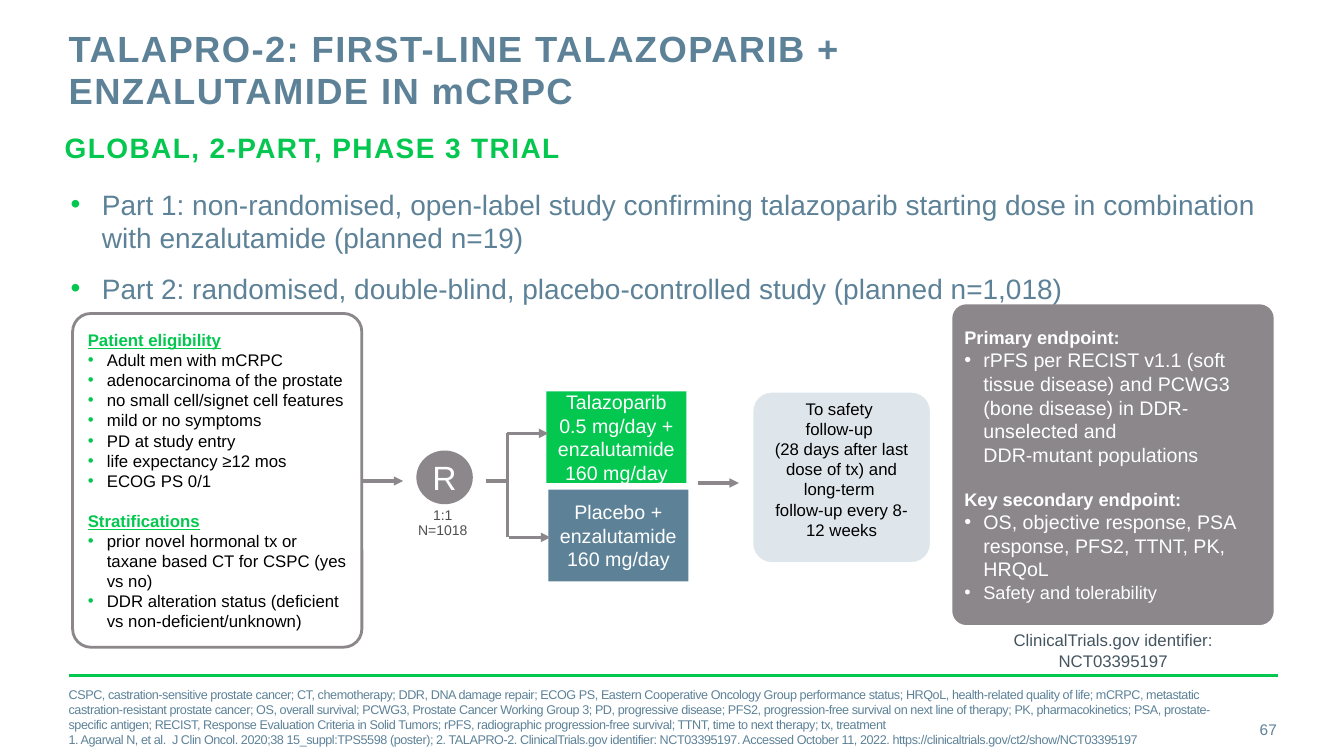
from lxml import etree
from pptx import Presentation
from pptx.dml.color import RGBColor
from pptx.enum.shapes import MSO_CONNECTOR, MSO_SHAPE
from pptx.enum.text import MSO_ANCHOR, MSO_AUTO_SIZE, PP_ALIGN
from pptx.oxml.ns import qn
from pptx.util import Cm, Pt

RECT, ROUNDED, OVAL = MSO_SHAPE.RECTANGLE, MSO_SHAPE.ROUNDED_RECTANGLE, MSO_SHAPE.OVAL
STRAIGHT = MSO_CONNECTOR.STRAIGHT
TOP, MIDDLE = MSO_ANCHOR.TOP, MSO_ANCHOR.MIDDLE
LEFT, CENTER, RIGHT = PP_ALIGN.LEFT, PP_ALIGN.CENTER, PP_ALIGN.RIGHT
NO_AUTOFIT = MSO_AUTO_SIZE.NONE

COLORS = {
    "green": "03C74F", "blue": "5D8298", "grey": "8B878B", "pale": "DEE6EB",
    "white": "FFFFFF", "black": "000000", "slate": "455560", "dark": "505050",
}
COMPARISON_LAYOUT = 4
NO_INSETS = (0, 0, 0, 0)
BOX_INSETS = (0.25, 0.13, 0.25, 0.13)


def rgb(name):
    return RGBColor.from_string(COLORS[name])


class TrialSlide:
    def __init__(self, presentation, font="Arial"):
        self.font = font
        self.slide = presentation.slides.add_slide(presentation.slide_layouts[COMPARISON_LAYOUT])

    def indent(self, paragraph, bullet, hanging):
        """Set the bullet colour and hanging indent, or clear both when bullet is None."""
        properties = paragraph._p.get_or_add_pPr()
        properties.set("marL", str(Cm(hanging) if bullet else 0))
        properties.set("indent", str(-Cm(hanging) if bullet else 0))
        if bullet:
            color = etree.SubElement(properties, qn("a:buClr"))
            etree.SubElement(color, qn("a:srgbClr"), val=COLORS[bullet])
            etree.SubElement(properties, qn("a:buFont"), typeface=self.font)
            etree.SubElement(properties, qn("a:buChar"), char="•")
        else:
            etree.SubElement(properties, qn("a:buNone"))

    def fill_frame(self, frame, paragraphs, align=LEFT, anchor=MIDDLE, insets=BOX_INSETS,
                   line_spacing=1.0, hanging=0.48, wrap=True, **style):
        """Fill a frame; each paragraph is a dict with text and changes to the shared style."""
        frame.auto_size = NO_AUTOFIT
        frame.word_wrap = wrap
        frame.vertical_anchor = anchor
        (frame.margin_left, frame.margin_top,
         frame.margin_right, frame.margin_bottom) = map(Cm, insets)
        for index, changes in enumerate(paragraphs):
            look = {**style, **changes}
            paragraph = frame.paragraphs[0] if index == 0 else frame.add_paragraph()
            self.indent(paragraph, look.get("bullet"), hanging)
            paragraph.alignment = align
            paragraph.line_spacing = line_spacing
            paragraph.space_before = Pt(look.get("before", 0))
            paragraph.space_after = Pt(0)
            for number, line in enumerate(look["text"].split("\n")):
                if number:
                    paragraph.add_line_break()
                run = paragraph.add_run()
                run.text = line
                run.font.name = self.font
                run.font.size = Pt(look["size"])
                run.font.color.rgb = rgb(look["color"])
                run.font.bold = look.get("bold", False)
                run.font.underline = look.get("underline", False)
                if "tracking" in look:
                    run._r.get_or_add_rPr().set("spc", str(look["tracking"]))

    def placeholder(self, idx, box, paragraphs, **style):
        holder = self.slide.placeholders[idx]
        holder.left, holder.top, holder.width, holder.height = map(Cm, box)
        self.fill_frame(holder.text_frame, paragraphs, insets=NO_INSETS, **style)

    def remove_placeholder(self, idx):
        element = self.slide.placeholders[idx]._element
        element.getparent().remove(element)

    def text(self, box, paragraphs, **style):
        frame = self.slide.shapes.add_textbox(*map(Cm, box)).text_frame
        self.fill_frame(frame, paragraphs, **style)

    def shape(self, kind, box, paragraphs, fill=None, line=None, weight=2, corner=None, **style):
        shape = self.slide.shapes.add_shape(kind, *map(Cm, box))
        shape.shadow.inherit = False
        if corner is not None:
            shape.adjustments[0] = corner
        if fill:
            shape.fill.solid()
            shape.fill.fore_color.rgb = rgb(fill)
        else:
            shape.fill.background()
        if line:
            shape.line.color.rgb = rgb(line)
            shape.line.width = Pt(weight)
        else:
            shape.line.fill.background()
        self.fill_frame(shape.text_frame, paragraphs, **style)

    def line(self, start, end, color="grey", weight=2.25, arrow=False):
        connector = self.slide.shapes.add_connector(STRAIGHT, *map(Cm, (*start, *end)))
        connector.line.color.rgb = rgb(color)
        connector.line.width = Pt(weight)
        if arrow:
            etree.SubElement(connector.line._get_or_add_ln(), qn("a:tailEnd"), type="triangle")
        etree.SubElement(connector._element.spPr, qn("a:effectLst"))


def add_headings(page):
    page.line((1.73, 17.02), (32.21, 17.02), color="green", weight=2)
    page.placeholder(0, (1.73, 0.69, 24.28, 2.24),
                     [{"text": "TALAPRO-2: FIRST-LINE TALAZOPARIB + ENZALUTAMIDE IN mCRPC"}],
                     anchor=TOP, line_spacing=Pt(30), size=26, color="blue", bold=True, tracking=100)
    page.placeholder(1, (1.63, 3.28, 30.48, 1.96), [{"text": "GLOBAL, 2-PART, PHASE 3 TRIAL"}],
                     anchor=TOP, size=20, color="green", bold=True, tracking=100)
    page.placeholder(2, (1.78, 4.72, 30.45, 1.65), [
        {"text": "Part 1: non-randomised, open-label study confirming talazoparib starting dose "
                 "in combination with enzalutamide (planned n=19)"},
        {"text": "Part 2: randomised, double-blind, placebo-controlled study (planned n=1,018)",
         "before": 12},
    ], anchor=TOP, hanging=0.79, size=20, color="blue", bullet="green")


def add_eligibility(page):
    heading = {"color": "green", "bold": True, "underline": True}
    criteria = ["Adult men with mCRPC", "adenocarcinoma of the prostate",
                "no small cell/signet cell features", "mild or no symptoms", "PD at study entry",
                "life expectancy ≥12 mos", "ECOG PS 0/1"]
    factors = ["prior novel hormonal tx or taxane based CT for CSPC (yes vs no)",
               "DDR alteration status (deficient vs non-deficient/unknown)"]
    page.shape(ROUNDED, (1.83, 7.9, 7.29, 8.41), [
        {"text": "Patient eligibility", **heading},
        *({"text": item, "bullet": "green"} for item in criteria),
        {"text": "Stratifications", "before": 14, **heading},
        *({"text": item, "bullet": "green"} for item in factors),
    ], line="grey", corner=0.063, insets=(0.25,) * 4, size=12, color="black")


def add_treatment_arms(page):
    arms = [((13.77, 9.86), "green", ["Talazoparib 0.5 mg/day +", "enzalutamide 160 mg/day"]),
            ((13.82, 12.34), "blue", ["Placebo +", "enzalutamide 160 mg/day"])]
    for corner, fill, regimen in arms:
        page.shape(RECT, (*corner, 3.53, 2.31), [{"text": part} for part in regimen],
                   fill=fill, align=CENTER, size=14, color="white")
    page.shape(ROUNDED, (18.95, 9.86, 4.52, 4.34), [
        {"text": "To safety \nfollow-up \n(28 days after last dose of tx) and long-term \n"
                 "follow-up every 8-12 weeks"},
    ], fill="pale", line="white", corner=0.114, align=CENTER,
        insets=(0.25, 0.13, 0.25, 0.55), size=12, color="black")


def add_randomisation(page):
    arrow_length, fork = 1.04, 12.78
    for x, y in [(9.12, 12.12), (fork, 10.92), (12.83, 13.54), (17.58, 12.17)]:
        page.line((x, y), (x + arrow_length, y), arrow=True)
    page.line((12.24, 12.12), (fork, 12.12))
    page.line((fork, 13.54), (fork, 10.92))
    page.shape(OVAL, (10.52, 11.38, 1.37, 1.3), [{"text": "R"}], fill="grey", line="grey",
               weight=1.5, align=CENTER, insets=NO_INSETS, size=24, color="white")
    page.text((10.54, 12.8, 1.24, 0.76), [{"text": "1:1"}, {"text": "N=1018"}], align=CENTER,
              anchor=TOP, insets=NO_INSETS, line_spacing=0.9, wrap=False, size=10, color="dark")


def add_endpoints(page):
    page.shape(ROUNDED, (24, 7.67, 8.1, 8.08), [
        {"text": "Primary endpoint:", "size": 13, "bold": True},
        {"text": "rPFS per RECIST v1.1 (soft \ntissue disease) and PCWG3 (bone disease) in "
                 "DDR-unselected and \nDDR-mutant populations", "bullet": "white"},
        {"text": "Key secondary endpoint:", "size": 13, "bold": True, "before": 16},
        {"text": "OS, objective response, PSA response, PFS2, TTNT, PK, HRQoL", "bullet": "white"},
        {"text": "Safety and tolerability", "size": 13, "bullet": "white"},
    ], fill="grey", corner=0.044, insets=(0.2, 0.13, 0.2, 0.13), size=14, color="white")
    page.text((24.41, 15.75, 7.29, 1.27), [{"text": "ClinicalTrials.gov identifier: NCT03395197"}],
              align=CENTER, anchor=TOP, size=12, color="slate")


def add_footer(page):
    page.placeholder(3, (1.73, 17.55, 29.57, 1.02), [
        {"text": "CSPC, castration-sensitive prostate cancer; CT, chemotherapy; DDR, DNA damage "
                 "repair; ECOG PS, Eastern Cooperative Oncology Group performance status; HRQoL, "
                 "health-related quality of life; mCRPC, metastatic castration-resistant prostate "
                 "cancer; OS, overall survival; PCWG3, Prostate Cancer Working Group 3; PD, "
                 "progressive disease; PFS2, progression-free survival on next line of therapy; "
                 "PK, pharmacokinetics; PSA, prostate-specific antigen; RECIST, Response "
                 "Evaluation Criteria in Solid Tumors; rPFS, radiographic progression-free "
                 "survival; TTNT, time to next therapy; tx, treatment"},
        {"text": "1. Agarwal N, et al.  J Clin Oncol. 2020;38 15_suppl:TPS5598 (poster); "
                 "2. TALAPRO-2. ClinicalTrials.gov identifier: NCT03395197. Accessed October 11, "
                 "2022. https://clinicaltrials.gov/ct2/show/NCT03395197"},
    ], size=9, color="blue", tracking=-30)
    page.text((30, 17.86, 2.18, 1.02), [{"text": "67"}], align=RIGHT, insets=NO_INSETS,
              size=11, color="blue")


def main():
    presentation = Presentation()
    presentation.slide_width, presentation.slide_height = Cm(33.87), Cm(19.05)
    page = TrialSlide(presentation)
    page.remove_placeholder(4)
    add_headings(page)
    add_eligibility(page)
    add_treatment_arms(page)
    add_randomisation(page)
    add_endpoints(page)
    add_footer(page)
    presentation.save("out.pptx")


if __name__ == "__main__":
    main()
